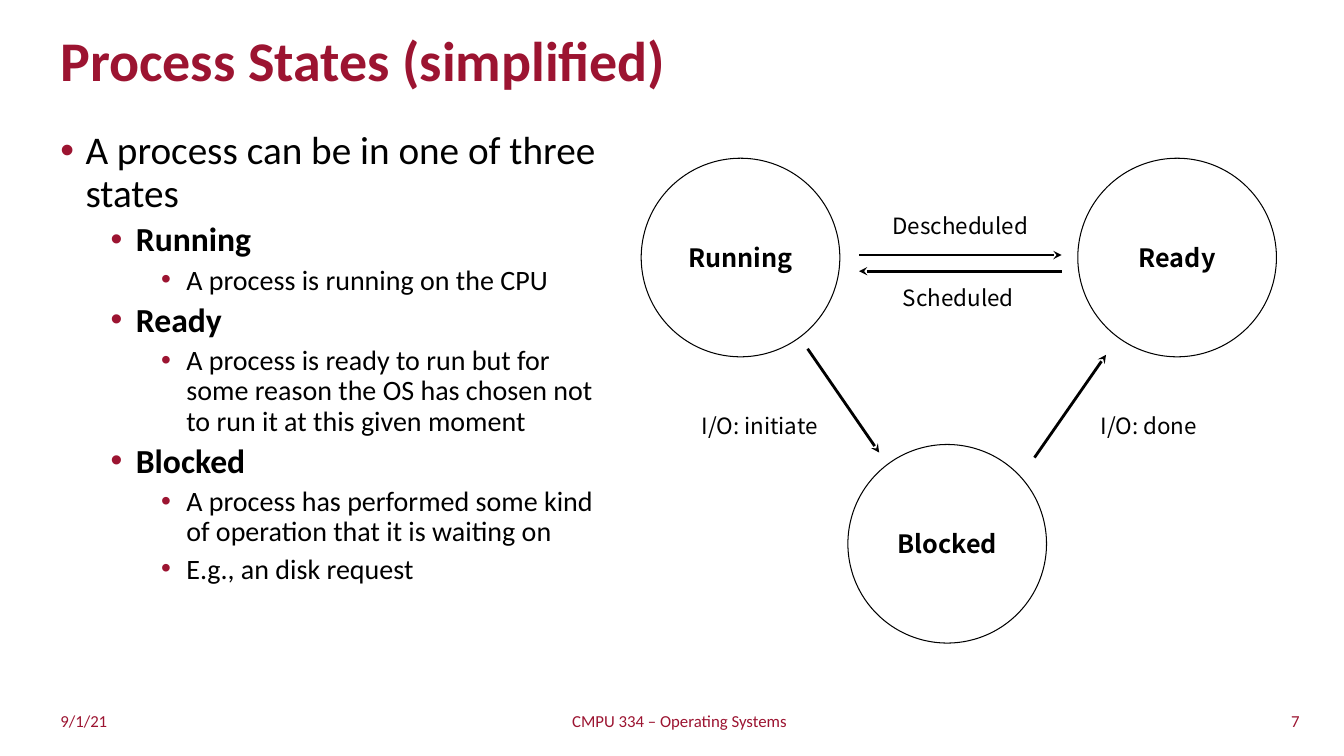
from lxml.etree import SubElement
from pptx import Presentation
from pptx.dml.color import RGBColor
from pptx.enum.shapes import MSO_CONNECTOR, MSO_SHAPE
from pptx.enum.text import MSO_ANCHOR, PP_ALIGN
from pptx.oxml.ns import qn
from pptx.util import Pt

PX = 9144  # 100 px to the inch
RED = RGBColor(0x9C, 0x14, 0x31)
BLACK = RGBColor(0, 0, 0)
WHITE = RGBColor(255, 255, 255)
SANS, NOTO = "Calibri", "Noto Sans CJK KR"
LEFT, CENTER, RIGHT = PP_ALIGN.LEFT, PP_ALIGN.CENTER, PP_ALIGN.RIGHT
TOP, MIDDLE = MSO_ANCHOR.TOP, MSO_ANCHOR.MIDDLE

POINTS = [
    (0, "A process can be in one of three states"),
    (1, "Running"),
    (2, "A process is running on the CPU"),
    (1, "Ready"),
    (2, "A process is ready to run but for some reason the OS has chosen "
        "not to run it at this given moment"),
    (1, "Blocked"),
    (2, "A process has performed some kind of operation that it is waiting on"),
    (2, "E.g., an disk request"),
]
# Places in the diagram, relative to its left top corner
STATES = [("Running", 0, 0), ("Ready", 433, 0), ("Blocked", 205, 284)]
MOVES = [
    ("Descheduled", (238, 49), (216, 96), (417, 96)),
    ("Scheduled", (236, 120), (417, 112), (216, 112)),
    ("I/O: initiate", (39, 247), (165, 189), (236, 292)),
    ("I/O: done", (425, 247), (390, 297), (461, 195)),
]


def emu(*sizes):
    return [size * PX for size in sizes]


def write(para, text, size=16, font=SANS, color=BLACK, bold=False,
          align=LEFT, line=None):
    para.text = text
    para.alignment = align
    if line:
        para.line_spacing = line
    para.font.size = Pt(size)
    para.font.name = font
    para.font.bold = bold
    para.font.color.rgb = color


def add_frame(slide, box, anchor=TOP):
    frame = slide.shapes.add_textbox(*emu(*box)).text_frame
    frame.word_wrap = True
    frame.vertical_anchor = anchor
    return frame


def add_label(slide, box, text, anchor=TOP, **form):
    write(add_frame(slide, box, anchor).paragraphs[0], text, **form)


def add_bullet(para, level):
    props = para._p.get_or_add_pPr()
    props.set("marL", str((25 + 50 * level) * PX))
    props.set("indent", str(-25 * PX))
    tint = SubElement(props, qn("a:buClr"))
    SubElement(tint, qn("a:srgbClr"), val=str(RED))
    SubElement(props, qn("a:buFont"), typeface="Arial")
    SubElement(props, qn("a:buChar"), char="•")


def add_points(slide, box):
    frame = add_frame(slide, box)
    for i, (level, text) in enumerate(POINTS):
        para = frame.add_paragraph() if i else frame.paragraphs[0]
        para.level = level
        add_bullet(para, level)
        if i:
            para.space_before = Pt(5)
        write(para, text, size=28 - 4 * level, bold=level == 1, line=0.9)


def add_state(slide, box, name):
    disc = slide.shapes.add_shape(MSO_SHAPE.OVAL, *emu(*box))
    disc.shadow.inherit = False
    disc.fill.solid()
    disc.fill.fore_color.rgb = WHITE
    disc.line.color.rgb = BLACK
    disc.line.width = Pt(0.75)
    frame = disc.text_frame
    frame.margin_left = frame.margin_right = 0
    frame.vertical_anchor = MIDDLE
    write(frame.paragraphs[0], name, size=18, font=NOTO, bold=True,
          align=CENTER)


def add_arrow(slide, start, end):
    arrow = slide.shapes.add_connector(MSO_CONNECTOR.STRAIGHT,
                                       *emu(*start, *end))
    arrow.line.color.rgb = BLACK
    arrow.line.width = Pt(2)
    SubElement(arrow.line._get_or_add_ln(), qn("a:tailEnd"), type="stealth")
    SubElement(arrow._element.spPr, qn("a:effectLst"))


def add_diagram(slide, left, top):
    def shift(spot):
        return left + spot[0], top + spot[1]

    for name, x, y in STATES:
        add_state(slide, (*shift((x, y)), 197, 197), name)
    for name, spot, start, end in MOVES:
        add_arrow(slide, shift(start), shift(end))
        add_label(slide, (*shift(spot), 157, 37), name, font=NOTO,
                  align=CENTER)


def add_footer(slide, left, top, width):
    side, mid, high = 376, 450, 40
    parts = [
        ("9/1/21", left, side, LEFT),
        ("CMPU 334 – Operating Systems", left + (width - mid) // 2, mid, CENTER),
        ("7", left + width - side, side, RIGHT),
    ]
    for text, x, wide, align in parts:
        add_label(slide, (x, top, wide, high), text, MIDDLE, size=12,
                  color=RED, align=align)


def main():
    deck = Presentation()
    deck.slide_width, deck.slide_height = emu(1333, 750)
    slide = deck.slides.add_slide(deck.slide_layouts[6])
    add_label(slide, (50, 25, 1145, 75), "Process States (simplified)", MIDDLE,
              size=40, color=RED, bold=True, line=0.9)
    add_points(slide, (50, 125, 566, 545))
    add_diagram(slide, 636, 157)
    add_footer(slide, 50, 695, 1249)
    deck.save("out.pptx")


if __name__ == "__main__":
    main()
